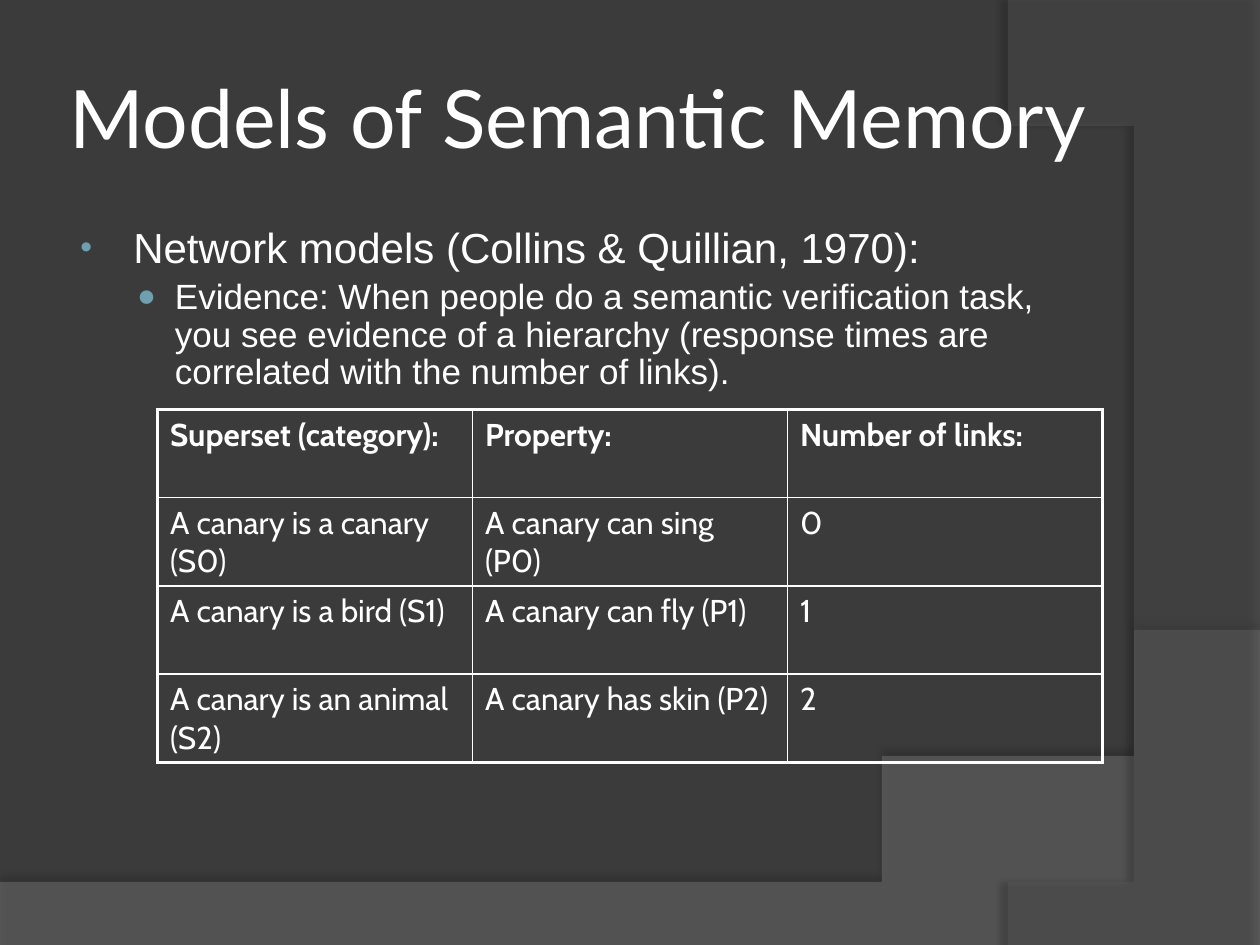
from dataclasses import dataclass

from lxml import etree
from pptx import Presentation
from pptx import util as u
from pptx.dml.color import RGBColor
from pptx.enum import text
from pptx.oxml import ns


@dataclass(frozen=True)
class Theme:
    back: str = "3B3B3B"
    wave: str = "7C7C7C"
    arc: str = "595959"
    shade: str = "000000"
    ink: str = "FFFFFF"
    dot: str = "6EA0B0"
    head: str = "Lato"
    body: str = "Arial"
    grid: str = "Cabin"
    title: int = 46
    main: int = 24
    sub: int = 20
    cell: int = 18
    thick: float = 2.25
    thin: float = 1


LOOK = Theme()
ROWS = [
    ["Superset (category):", "Property:", "Number of links:"],
    ["A canary is a canary (S0)", "A canary can sing (P0)", "0"],
    ["A canary is a bird (S1)", "A canary can fly (P1)", "1"],
    ["A canary is an animal (S2)", "A canary has skin (P2)", "2"],
]


def put(obj, vals):
    for name, val in vals.items():
        setattr(obj, name, val)


def node(root, tag, **attrs):
    """Add a drawing element below root."""
    kid = etree.SubElement(root, ns.qn(f"a:{tag}"))
    for name, val in attrs.items():
        kid.set(name, str(val))
    return kid


def tint(root, color, alpha):
    node(node(root, "srgbClr", val=color), "alpha", val=alpha * 1000)


def curve(a, b, c, d, steps=48):
    """Points along a cubic curve, without its start."""
    for i in range(1, steps + 1):
        t = i / steps
        s = 1 - t
        yield tuple(s**3 * p + 3 * s * s * t * q + 3 * s * t * t * r + t**3 * v
                    for p, q, r, v in zip(a, b, c, d))


def sweep(slide, pts, bend, color, alpha, shade, dist, angle):
    """Translucent backdrop with one curved edge and a soft shadow."""
    pen = slide.shapes.build_freeform(*pts[0], scale=u.Inches(1))
    pen.add_line_segments([*pts[1:], *curve(pts[-1], *bend)], close=True)
    form = pen.convert_to_shape()
    form.fill.solid()
    form.fill.fore_color.rgb = RGBColor.from_string(color)
    props = form.fill._xPr
    node(props.find(".//" + ns.qn("a:srgbClr")), "alpha", val=alpha * 1000)
    form.line.fill.background()
    form.shadow.inherit = False
    glow = node(props.find(ns.qn("a:effectLst")), "outerShdw",
                blurRad=u.Pt(4), dist=u.Pt(dist), dir=angle * 60000,
                algn="ctr", rotWithShape=0)
    tint(glow, LOOK.shade, shade)


def write(par, words, size, font, bold=False):
    run = par.add_run()
    run.text = words
    put(run.font, {"size": u.Pt(size), "name": font, "bold": bold})
    run.font.color.rgb = RGBColor.from_string(LOOK.ink)


def box(slide, left, top, wide, high, **vals):
    frame = slide.shapes.add_textbox(
        *map(u.Inches, (left, top, wide, high))).text_frame
    put(frame, {"word_wrap": True, **vals})
    return frame


def bullet(par, words, size, level, left, hang, mark, scale):
    put(par, {"level": level, "line_spacing": 0.9,
              "space_before": u.Pt(size * 0.2)})
    props = par._p.get_or_add_pPr()
    props.set("marL", str(u.Inches(left)))
    props.set("indent", str(u.Inches(-hang)))
    node(node(props, "buClr"), "srgbClr", val=LOOK.dot)
    node(props, "buSzPct", val=scale * 1000)
    node(props, "buFont", typeface=LOOK.body)
    node(props, "buChar", char=mark)
    write(par, words, size, LOOK.body)


def edge(cell, side, width):
    line = node(cell._tc.get_or_add_tcPr(), f"ln{side}", w=u.Pt(width))
    node(node(line, "solidFill"), "srgbClr", val=LOOK.ink)


def grid(slide, rows, left, top, wide, high):
    """Clear table with a thick frame and thin inner lines."""
    tall, broad = len(rows), len(rows[0])
    table = slide.shapes.add_table(
        tall, broad, *map(u.Inches, (left, top, wide, high))).table
    put(table, {"first_row": False, "horz_banding": False})
    for r, row in enumerate(rows):
        for c, words in enumerate(row):
            cell = table.cell(r, c)
            outer = {"L": c == 0, "R": c == broad - 1,
                     "T": r == 0, "B": r == tall - 1}
            for side, rim in outer.items():
                edge(cell, side, LOOK.thick if rim else LOOK.thin)
            cell.fill.background()
            par = cell.text_frame.paragraphs[0]
            par.space_before = u.Pt(LOOK.cell * 0.2)
            write(par, words, LOOK.cell, LOOK.grid, bold=r == 0)


def main():
    deck = Presentation()
    put(deck, {"slide_width": u.Inches(10), "slide_height": u.Inches(7.5)})
    slide = deck.slides.add_slide(deck.slide_layouts[6])

    # Backdrop
    fill = slide.background.fill
    fill.solid()
    fill.fore_color.rgb = RGBColor.from_string(LOOK.back)
    sweep(slide, [(0, 7.05), (0, 7.51), (10, 7.51), (10, 5.2)],
          [(5.59, 7.29), (3.91, 7.19), (0, 7.05)],
          LOOK.wave, 45, 35, 3.5, 270)
    sweep(slide, [(10, 0.02), (10, 7.5), (8.21, 7.5)],
          [(9.35, 6.19), (10.18, 3), (8, 0)],
          LOOK.arc, 40, 45, 4, 180)

    # Title
    inset = {f"margin_{side}": u.Inches(0.05)
             for side in ("left", "top", "right", "bottom")}
    frame = box(slide, 0.5, 0.3, 8.17, 1.25,
                vertical_anchor=text.MSO_ANCHOR.MIDDLE, **inset)
    write(frame.paragraphs[0], "Models of Semantic Memory",
          LOOK.title, LOOK.head)

    # Bullets
    frame = box(slide, 0.5, 1.75, 8.17, 4.95)
    bullet(frame.paragraphs[0], "Network models (Collins & Quillian, 1970):",
           LOOK.main, 0, 0.46, 0.42, "•", 80)
    bullet(frame.add_paragraph(),
           "Evidence: When people do a semantic verification task, you see "
           "evidence of a hierarchy (response times are correlated with the "
           "number of links).", LOOK.sub, 1, 0.79, 0.3, "●", 90)

    # Table
    grid(slide, ROWS, 1.25, 3.25, 7.5, 2.8)
    deck.save("out.pptx")


if __name__ == "__main__":
    main()
